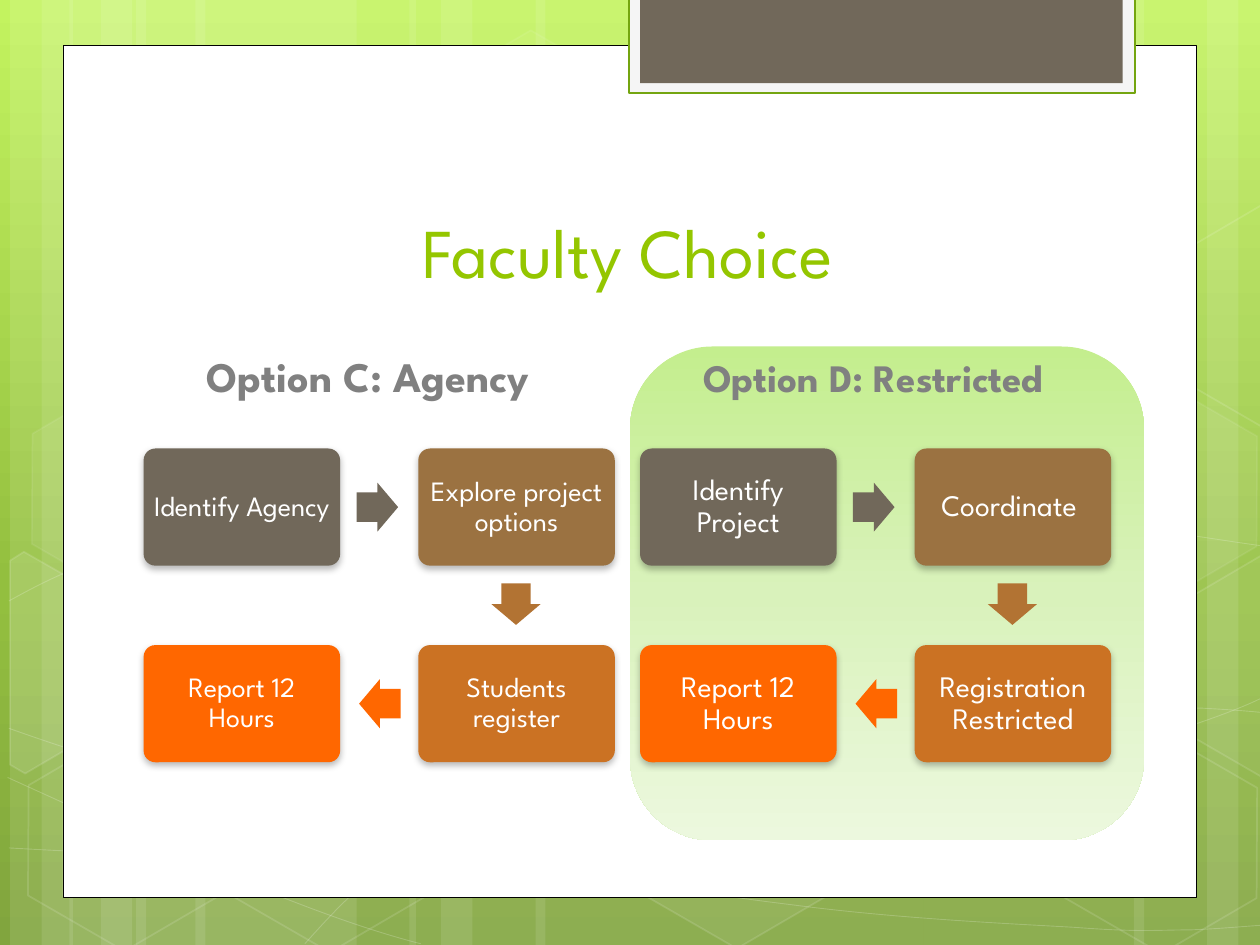
from lxml.etree import SubElement
from pptx import Presentation
from pptx.dml.color import RGBColor
from pptx.enum.shapes import MSO_SHAPE
from pptx.enum.text import MSO_ANCHOR, MSO_AUTO_SIZE, PP_ALIGN
from pptx.oxml.ns import qn
from pptx.util import Inches, Pt

RECT, ROUND = MSO_SHAPE.RECTANGLE, MSO_SHAPE.ROUNDED_RECTANGLE
HEX, ARROW = MSO_SHAPE.HEXAGON, MSO_SHAPE.RIGHT_ARROW
BOTTOM, MIDDLE, CENTER = MSO_ANCHOR.BOTTOM, MSO_ANCHOR.MIDDLE, PP_ALIGN.CENTER
NO_FIT = MSO_AUTO_SIZE.NONE
FONT = "League Spartan"

WHITE, BLACK = RGBColor(255, 255, 255), RGBColor(0, 0, 0)
LIME, GREEN = RGBColor(0x94, 0xC6, 0x00), RGBColor(0x74, 0xA5, 0x10)
GRAY, PALE = RGBColor(0x80, 0x80, 0x80), RGBColor(0xF5, 0xF5, 0xF5)
STONE, BROWN = RGBColor(0x71, 0x68, 0x5A), RGBColor(0x9B, 0x72, 0x41)
RUST, COPPER = RGBColor(0xB2, 0x73, 0x33), RGBColor(0xCB, 0x72, 0x23)
ORANGE = RGBColor(0xFF, 0x67, 0x00)
SKY = [(0, RGBColor(0xC3, 0xF3, 0x5F)), (62, RGBColor(0x93, 0xBF, 0x3F)),
       (100, RGBColor(0x81, 0xA5, 0x3E))]
MINT = [(0, RGBColor(0xC4, 0xEE, 0x8E)), (50, RGBColor(0xD9, 0xF2, 0xBB)),
        (100, RGBColor(0xEC, 0xF8, 0xDE))]

BANDS = [(1.08, 1.75), (0.08, 0.5), (0.33, 0.83), (1.55, 1.75), (0.55, 0.5), (0.8, 0.83),
         (7.33, 1.75), (9.58, 0.5), (9, 0.83), (4.25, 3.08), (3.25, 0.5), (3.5, 0.83)]
CURVES = [
    [(0.07, 6.73), (0.61, 6.76), (1.15, 6.79), (1.9, 6.78), (2.65, 6.77), (3.58, 6.75),
     (4.58, 6.65), (5.58, 6.55), (7, 6.36), (7.92, 6.17), (8.83, 5.98), (9.77, 5.68),
     (10.07, 5.51)],
    [(0.07, 4.77), (0.36, 4.61), (0.65, 4.46), (1.21, 4.31), (1.78, 4.16), (2.59, 3.94),
     (3.47, 3.87), (4.36, 3.8), (5.44, 3.79), (6.54, 3.87), (7.64, 3.95), (9.47, 4.26),
     (10.07, 4.34)],
    [(0.06, 6.17), (1.27, 6.72), (2.47, 7.27), (3.34, 7.49)],
    [(0.07, 5.78), (0.38, 5.89), (0.7, 6), (1.28, 6.16), (1.86, 6.31), (2.73, 6.56),
     (3.57, 6.73), (4.4, 6.9), (5.45, 7.08), (6.28, 7.18), (7.11, 7.29), (8, 7.33),
     (8.53, 7.36), (9.05, 7.4), (9.19, 7.38), (9.45, 7.38), (9.71, 7.37), (9.89, 7.35),
     (10.07, 7.34)],
    [(2.42, 7.49), (2.6, 7.29), (2.78, 7.09), (3.02, 6.91), (3.26, 6.73), (3.6, 6.53),
     (3.88, 6.39), (4.16, 6.25), (4.33, 6.19), (4.7, 6.09), (5.06, 5.99), (5.73, 5.85),
     (6.08, 5.78), (6.44, 5.71), (6.49, 5.71), (6.8, 5.69), (7.11, 5.66), (7.6, 5.63),
     (7.94, 5.62), (8.29, 5.61), (8.86, 5.62), (8.86, 5.62), (9.08, 5.62), (9.31, 5.62),
     (9.53, 5.62), (9.71, 5.63), (9.88, 5.64), (10.06, 5.66)],
]
HEXES = [(3.34, 0.36, 4, 8), (4.97, 5.89, 6, 12), (0.11, 5.91, 0, 12), (0.14, 3.12, 7, 8),
         (1.74, 5.92, 0, 12), (7.53, 4.53, 10, 12), (8.34, 5.93, 0, 12), (8.34, 3.14, 7, 8)]
CUTS = [
    ([(0.08, 4.45), (0.19, 4.38), (0.96, 4.82), (0.95, 5.7), (0.2, 6.14), (0.08, 6.07)], 10),
    ([(9.26, 4.85), (10.01, 4.41), (10.09, 4.46), (10.09, 6.13), (10.02, 6.17),
      (9.26, 5.73)], 4),
    ([(9.26, 2.07), (10.01, 1.63), (10.1, 1.68), (10.09, 3.35), (10.02, 3.39),
      (9.26, 2.95)], 0),
]


def fade(fill, root, alpha):
    """Paint a fill white with the given opacity percentage."""
    fill.solid()
    fill.fore_color.rgb = WHITE
    tone = root.find(qn("a:solidFill")).find(qn("a:srgbClr"))
    SubElement(tone, qn("a:alpha")).set("val", str(alpha * 1000))


def blend(fill, root, stops):
    """Paint a top to bottom gradient through the given stops."""
    fill.gradient()
    fill.gradient_angle = 270
    group = next(root.iter(qn("a:gsLst")))
    for old in list(group):
        group.remove(old)
    for pos, color in stops:
        stop = SubElement(group, qn("a:gs"), pos=str(pos * 1000))
        SubElement(stop, qn("a:srgbClr"), val=str(color))


def block(slide, kind, box, color=None, edge=None, width=1):
    """Add a flat preset shape in a box of inches."""
    shape = slide.shapes.add_shape(kind, *map(Inches, box))
    shape.shadow.inherit = False
    if color is None:
        shape.fill.background()
    else:
        shape.fill.solid()
        shape.fill.fore_color.rgb = color
    if edge is None:
        shape.line.fill.background()
    else:
        shape.line.color.rgb = edge
        shape.line.width = Pt(width)
    return shape


def glass(shape, fill, line, width=1):
    """Give a shape a sheer white fill and outline."""
    shape.shadow.inherit = False
    if fill:
        fade(shape.fill, shape._element.spPr, fill)
    else:
        shape.fill.background()
    if line:
        shape.line.width = Pt(width)
        fade(shape.line.fill, shape.line._get_or_add_ln(), line)


def trace(slide, points, close):
    """Add a freeform through points in inches."""
    spots = [(Inches(x), Inches(y)) for x, y in points]
    pen = slide.shapes.build_freeform(*spots[0])
    pen.add_line_segments(spots[1:], close=close)
    return pen.convert_to_shape()


def curve(slide, knots):
    """Add an open chain of cubic curves."""
    shape = trace(slide, knots, False)
    route = next(shape._element.iter(qn("a:path")))
    legs = route.findall(qn("a:lnTo"))
    for i in range(0, len(legs), 3):
        bend = SubElement(route, qn("a:cubicBezTo"))
        for leg in legs[i:i + 3]:
            bend.append(leg[0])
            route.remove(leg)
    return shape


def scene(slide, height):
    """Draw the green backdrop with its bands, curves and hexagons."""
    blend(slide.background.fill, slide._element, SKY)
    for left, width in BANDS:
        glass(block(slide, RECT, (left, 0, width, height)), 10, 0)
    for knots in CURVES:
        glass(curve(slide, knots), 0, 20, 0.5)
    for left, top, fill, line in HEXES:
        shape = block(slide, HEX, (left, top, 1.75, 1.52))
        shape.adjustments[0] = 0.285
        shape.rotation = 30
        glass(shape, fill, line)
    for points, fill in CUTS:
        glass(trace(slide, points, True), fill, 12)


def frame(slide, box):
    """Draw the white page and the tab at its top."""
    left, top, width, height = box
    block(slide, RECT, box, WHITE, BLACK, 0.5)
    block(slide, RECT, (left + 4.49, top - 0.38, 4.02, 0.76), PALE, GREEN, 1.25)
    block(slide, RECT, (left + 4.58, top - 0.38, 3.83, 0.68), STONE)


def label(slide, index, box, text, size, color):
    """Fill a placeholder, move it to a box and bring it forward."""
    holder = slide.placeholders[index]
    holder.left, holder.top, holder.width, holder.height = map(Inches, box)
    slide.shapes._spTree.append(holder._element)
    body = holder.text_frame
    body.text = text
    body.auto_size = NO_FIT
    body.vertical_anchor = BOTTOM
    font = body.paragraphs[0].font
    font.name, font.size, font.color.rgb = FONT, Pt(size), color


def card(slide, box, text, size, color):
    """Add a rounded step card with a soft shadow."""
    shape = block(slide, ROUND, box, color)
    shape.adjustments[0] = 0.1
    glow = SubElement(shape._element.spPr.find(qn("a:effectLst")), qn("a:outerShdw"),
                      blurRad=str(Pt(4)), dist=str(Pt(2)), dir="5400000", rotWithShape="0")
    tone = SubElement(glow, qn("a:srgbClr"), val=str(BLACK))
    SubElement(tone, qn("a:alpha"), val="28000")
    body = shape.text_frame
    body.text = text
    body.word_wrap = True
    body.vertical_anchor = MIDDLE
    body.margin_left = body.margin_right = Inches(0.04)
    line = body.paragraphs[0]
    line.alignment, line.line_spacing = CENTER, 0.9
    line.font.name, line.font.size, line.font.color.rgb = FONT, Pt(size), WHITE


def flow(slide, box, steps, size):
    """Lay four cards clockwise in a box, with arrows between them."""
    left, top, width, height = box
    wide, tall = 1.56, 0.93
    right, low = left + width - wide, top + height - tall
    spots = [(left, top), (right, top), (right, low), (left, low)]
    for spot, text, color in zip(spots, steps, (STONE, BROWN, COPPER, ORANGE)):
        card(slide, (*spot, wide, tall), text, size, color)
    turns = [(1.69, 0.27, 0, STONE), (2.79, 1.04, 90, RUST), (1.71, 1.83, 180, ORANGE)]
    for across, down, angle, color in turns:
        arrow = block(slide, ARROW, (left + across, top + down, 0.33, 0.39), color)
        arrow.adjustments[0] = 0.6
        arrow.rotation = angle


def main():
    """Build and save the slide."""
    deck = Presentation()
    deck.slide_width, deck.slide_height = Inches(10), Inches(7.5)
    slide = deck.slides.add_slide(deck.slide_layouts[4])
    for index in (2, 4):
        spare = slide.placeholders[index]._element
        spare.getparent().remove(spare)
    scene(slide, 7.5)
    frame(slide, (0.5, 0.36, 9, 6.76))
    panel = block(slide, ROUND, (5, 2.75, 4.08, 3.92))
    blend(panel.fill, panel._element, MINT)
    label(slide, 0, (1.14, 1.12, 7.68, 1.25), "Faculty Choice", 40, LIME)
    label(slide, 1, (1.54, 2.53, 3.34, 0.7), "Option C: Agency", 24, GRAY)
    flow(slide, (1.14, 3.56, 3.74, 2.49),
         ["Identify Agency", "Explore project options", "Students register",
          "Report 12 Hours"], 16)
    label(slide, 3, (5.48, 2.53, 3.34, 0.7), "Option D: Restricted", 22.2, GRAY)
    flow(slide, (5.08, 3.56, 3.74, 2.49),
         ["Identify Project", "Coordinate ", "Registration Restricted", "Report 12 Hours"], 17)
    deck.save("out.pptx")


if __name__ == "__main__":
    main()
